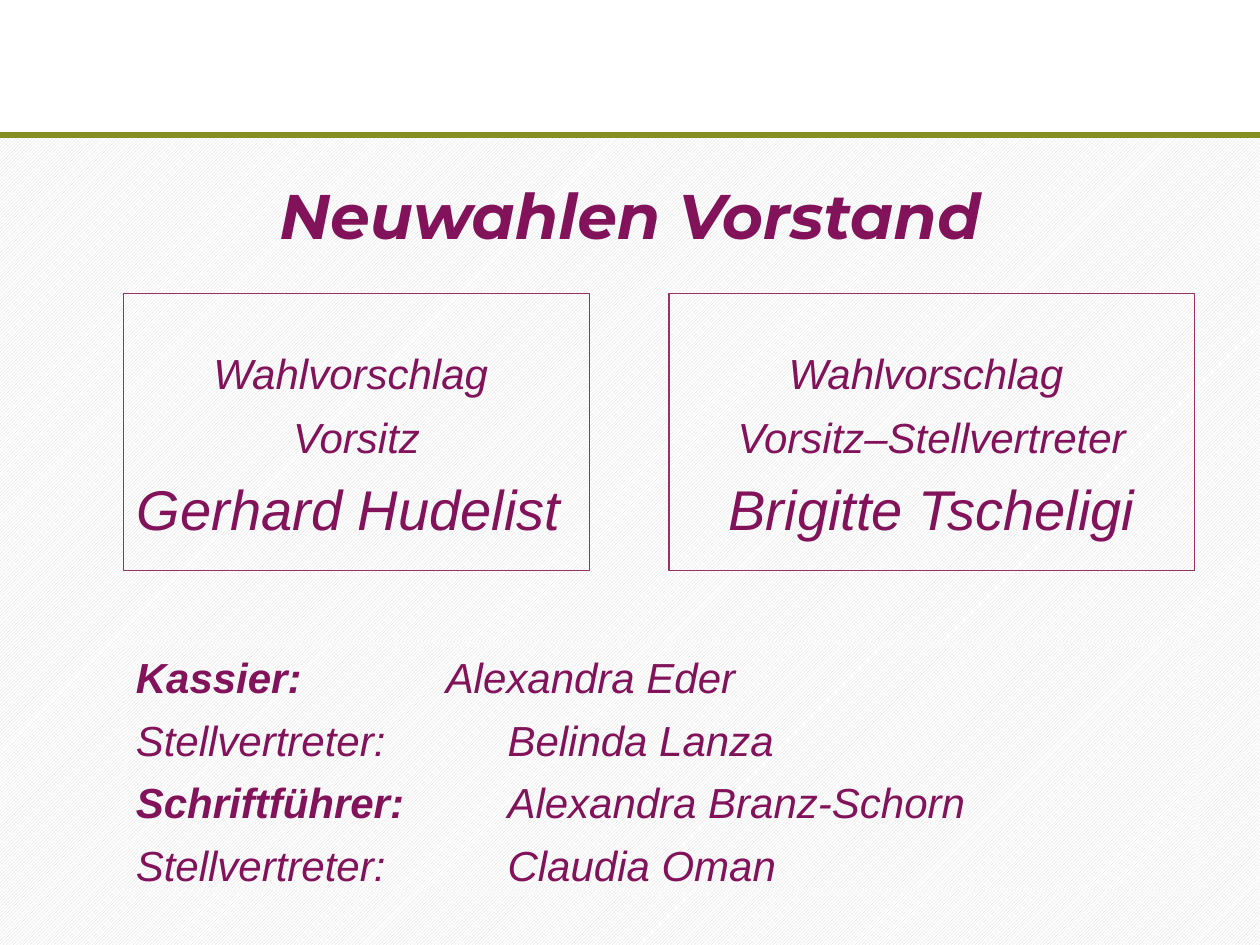
from pptx import Presentation
from pptx.dml.color import RGBColor
from pptx.enum.dml import MSO_PATTERN
from pptx.enum.shapes import MSO_CONNECTOR, MSO_SHAPE
from pptx.enum.text import MSO_ANCHOR, PP_ALIGN
from pptx.oxml.ns import qn
from pptx.util import Inches, Pt
from lxml.etree import SubElement

PLUM = RGBColor(0x82, 0x12, 0x5A)
BORDER = RGBColor(0x99, 0x33, 0x66)
OLIVE = RGBColor(0x87, 0x8E, 0x24)
GREY = RGBColor(0xD9, 0xD9, 0xD9)
WHITE = RGBColor(0xFF, 0xFF, 0xFF)

TITLE = "Neuwahlen Vorstand"
PROPOSALS = [
    (0.98, 3.7, [("Wahlvorschlag ", 24), ("Vorsitz", 24), ("Gerhard Hudelist ", 32)]),
    (5.31, 4.17, [("Wahlvorschlag ", 24), ("Vorsitz–Stellvertreter", 24), ("Brigitte Tscheligi", 32)]),
]
OFFICES = [
    ("Kassier:", "Alexandra Eder", True, 2.46),
    ("Stellvertreter:", "Belinda Lanza", False, 2.95),
    ("Schriftführer:", "Alexandra Branz-Schorn", True, 2.95),
    ("Stellvertreter:", "Claudia Oman", False, 2.95),
]


def add_text(p, text, size=24, font="Arial", bold=False):
    r = p.add_run()
    r.text = text
    r.font.size = Pt(size)
    r.font.name = font
    r.font.bold = bold
    r.font.italic = True
    r.font.color.rgb = PLUM


def add_box(s, x, y, w, h, top=0.05, anchor=MSO_ANCHOR.TOP):
    sp = s.shapes.add_shape(MSO_SHAPE.RECTANGLE, Inches(x), Inches(y), Inches(w), Inches(h))
    sp.shadow.inherit = False
    sp.fill.background()
    sp.line.fill.background()
    tf = sp.text_frame
    tf.word_wrap = True
    tf.vertical_anchor = anchor
    tf.margin_top = Inches(top)
    return sp


def next_paragraph(tf, i, align, gap):
    p = tf.add_paragraph() if i else tf.paragraphs[0]
    p.alignment = align
    p.space_before = Pt(gap if i else 0)
    return p


def add_tab(p, pos):
    tabs = SubElement(p._p.get_or_add_pPr(), qn("a:tabLst"))
    SubElement(tabs, qn("a:tab"), pos=str(Inches(pos)), algn="l")


def set_hatch(fill):
    fill.patterned()
    fill.pattern = MSO_PATTERN.LIGHT_UPWARD_DIAGONAL
    fill.fore_color.rgb = GREY
    fill.back_color.rgb = WHITE


prs = Presentation()
prs.slide_width, prs.slide_height = Inches(10), Inches(7.5)
s = prs.slides.add_slide(prs.slide_layouts[6])
set_hatch(s.background.fill)

header = add_box(s, 0, -0.03, 10, 1.1)
header.fill.solid()
header.fill.fore_color.rgb = WHITE

rule = s.shapes.add_connector(MSO_CONNECTOR.STRAIGHT, 0, Inches(1.07), Inches(10), Inches(1.07))
rule.line.color.rgb = OLIVE
rule.line.width = Pt(3.75)
SubElement(rule._element.spPr, qn("a:effectLst"))

title = add_box(s, 0.75, 1.15, 8.5, 1.1, anchor=MSO_ANCHOR.MIDDLE)
p = next_paragraph(title.text_frame, 0, PP_ALIGN.CENTER, 0)
add_text(p, TITLE, size=36, font="Montserrat", bold=True)

for x, w, lines in PROPOSALS:
    sp = add_box(s, x, 2.33, w, 2.2, top=0.43)
    sp.line.color.rgb = BORDER
    sp.line.width = Pt(0.75)
    for i, (text, size) in enumerate(lines):
        p = next_paragraph(sp.text_frame, i, PP_ALIGN.CENTER, 7.5)
        add_text(p, text, size=size)

offices = add_box(s, 0.98, 5.09, 8.5, 1.97, top=0.08)
set_hatch(offices.fill)
for i, (office, name, bold, tab) in enumerate(OFFICES):
    p = next_paragraph(offices.text_frame, i, PP_ALIGN.LEFT, 7)
    add_tab(p, tab)
    add_text(p, office, bold=bold)
    add_text(p, "\t" + name)

prs.save("out.pptx")
